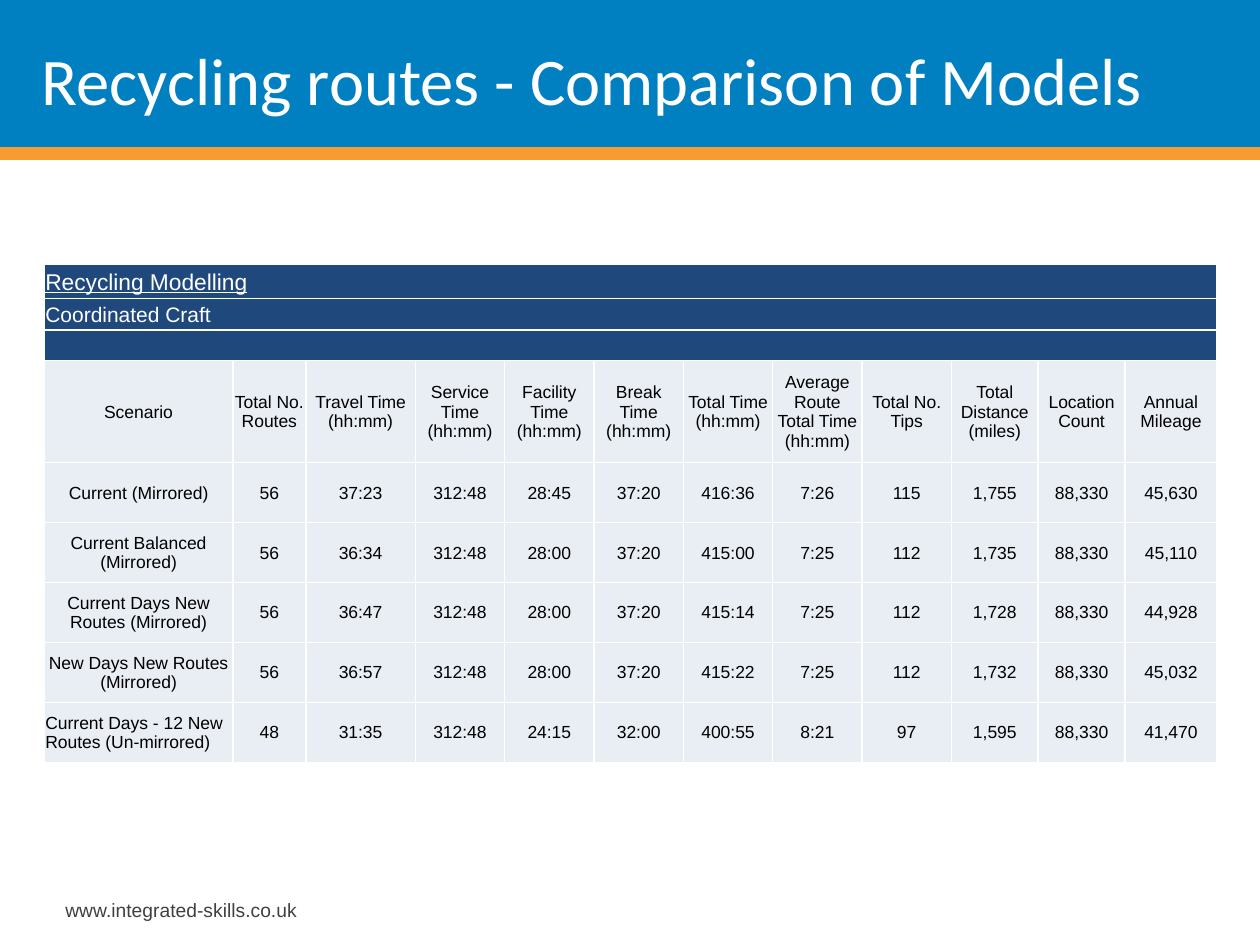
import dataclasses

import lxml.etree
import pptx
import pptx.dml.color
import pptx.enum.shapes
import pptx.enum.text
import pptx.oxml.ns
import pptx.util

HEADINGS = [
    "Scenario", "Total No. Routes", "Travel Time (hh:mm)", "Service Time (hh:mm)",
    "Facility Time (hh:mm)", "Break Time (hh:mm)", "Total Time (hh:mm)",
    "Average Route Total Time (hh:mm)", "Total No. Tips", "Total Distance (miles)",
    "Location Count", "Annual Mileage",
]
SCENARIOS = [
    ["Current (Mirrored)", "56", "37:23", "312:48", "28:45", "37:20",
     "416:36", "7:26", "115", "1,755", "88,330", "45,630"],
    ["Current Balanced (Mirrored)", "56", "36:34", "312:48", "28:00", "37:20",
     "415:00", "7:25", "112", "1,735", "88,330", "45,110"],
    ["Current Days New Routes (Mirrored)", "56", "36:47", "312:48", "28:00", "37:20",
     "415:14", "7:25", "112", "1,728", "88,330", "44,928"],
    ["New Days New Routes (Mirrored)", "56", "36:57", "312:48", "28:00", "37:20",
     "415:22", "7:25", "112", "1,732", "88,330", "45,032"],
    ["Current Days - 12 New Routes (Un-mirrored)", "48", "31:35", "312:48", "24:15", "32:00",
     "400:55", "8:21", "97", "1,595", "88,330", "41,470"],
]
COLUMN_WEIGHTS = [1.5, 0.58, 0.87] + [0.71] * 6 + [0.69, 0.69, 0.73]
TOP_ROW_WEIGHTS = [0.27, 0.25, 0.24, 0.81]
TABLE_WEIGHT = 3.95


@dataclasses.dataclass(frozen=True)
class Theme:
    band: str = "0080C0"
    rule: str = "F89C31"
    banner: str = "1F497D"
    cell: str = "E9EDF4"
    light: str = "FFFFFF"
    dark: str = "000000"
    muted: str = "404040"
    title_font: str = "Calibri"
    body_font: str = "Arial"
    title_size: float = 38
    banner_size: float = 13
    subtitle_size: float = 12
    footer_size: float = 11
    cell_size: float = 10
    rule_width: float = 7.75
    border_width: float = 1


@dataclasses.dataclass(frozen=True)
class Box:
    left: int
    top: int
    width: int
    height: int

    def share(self, x, y, width, height):
        return Box(int(self.left + x * self.width), int(self.top + y * self.height),
                   int(width * self.width), int(height * self.height))

    def edges(self):
        return self.left, self.top, self.width, self.height


THEME = Theme()


def color(value):
    return pptx.dml.color.RGBColor.from_string(value)


def style_text(paragraph, face, size, shade):
    paragraph.font.name = face
    paragraph.font.size = pptx.util.Pt(size)
    paragraph.font.color.rgb = color(shade)


def add_header(slide, box, heading):
    band = slide.shapes.add_shape(pptx.enum.shapes.MSO_SHAPE.RECTANGLE, *box.edges())
    band.shadow.inherit = False
    band.fill.solid()
    band.fill.fore_color.rgb = color(THEME.band)
    band.line.fill.background()

    rule_y = int(box.top + 0.976 * box.height)
    rule = slide.shapes.add_connector(pptx.enum.shapes.MSO_CONNECTOR.STRAIGHT,
                                      box.left, rule_y, box.left + box.width, rule_y)
    rule.line.color.rgb = color(THEME.rule)
    rule.line.width = pptx.util.Pt(THEME.rule_width)
    lxml.etree.SubElement(rule.element.spPr, pptx.oxml.ns.qn("a:effectLst"))

    title = slide.shapes.title
    title.element.getparent().append(title.element)
    title.left, title.top, title.width, title.height = box.share(0.023, 0.1, 0.955, 0.8).edges()
    title.text_frame.text = heading
    title.text_frame.vertical_anchor = pptx.enum.text.MSO_ANCHOR.MIDDLE
    paragraph = title.text_frame.paragraphs[0]
    paragraph.alignment = pptx.enum.text.PP_ALIGN.LEFT
    style_text(paragraph, THEME.title_font, THEME.title_size, THEME.light)


def add_borders(cell):
    properties = cell._tc.get_or_add_tcPr()
    for side in ("a:lnL", "a:lnR", "a:lnT", "a:lnB"):
        line = lxml.etree.SubElement(properties, pptx.oxml.ns.qn(side),
                                     w=str(pptx.util.Pt(THEME.border_width)))
        fill = lxml.etree.SubElement(line, pptx.oxml.ns.qn("a:solidFill"))
        lxml.etree.SubElement(fill, pptx.oxml.ns.qn("a:srgbClr"), val=THEME.light)


def fill_cell(cell, text, background, size, shade, alignment):
    add_borders(cell)
    cell.fill.solid()
    cell.fill.fore_color.rgb = color(background)
    cell.margin_left = cell.margin_right = cell.margin_top = pptx.util.Inches(0.01)
    cell.margin_bottom = 0
    cell.vertical_anchor = pptx.enum.text.MSO_ANCHOR.MIDDLE
    cell.text = text
    paragraph = cell.text_frame.paragraphs[0]
    paragraph.alignment = alignment
    style_text(paragraph, THEME.body_font, size, shade)


def add_comparison(slide, box):
    data_weight = (TABLE_WEIGHT - sum(TOP_ROW_WEIGHTS)) / len(SCENARIOS)
    row_weights = TOP_ROW_WEIGHTS + [data_weight] * len(SCENARIOS)
    table = slide.shapes.add_table(len(row_weights), len(COLUMN_WEIGHTS), *box.edges()).table
    table.first_row = table.horz_banding = False
    for column, weight in zip(table.columns, COLUMN_WEIGHTS):
        column.width = int(box.width * weight / sum(COLUMN_WEIGHTS))
    for row, weight in zip(table.rows, row_weights):
        row.height = int(box.height * weight / TABLE_WEIGHT)

    align = pptx.enum.text.PP_ALIGN
    banners = [("Recycling Modelling", THEME.banner_size),
               ("Coordinated Craft", THEME.subtitle_size),
               ("", THEME.cell_size)]
    for row, (text, size) in enumerate(banners):
        for column in range(len(COLUMN_WEIGHTS)):
            fill_cell(table.cell(row, column), text if column == 0 else "",
                      THEME.banner, size, THEME.light, align.LEFT)
        table.cell(row, 0).merge(table.cell(row, len(COLUMN_WEIGHTS) - 1))
    table.cell(0, 0).text_frame.paragraphs[0].font.underline = True

    for row, values in enumerate([HEADINGS] + SCENARIOS, len(banners)):
        for column, value in enumerate(values):
            fill_cell(table.cell(row, column), value, THEME.cell,
                      THEME.cell_size, THEME.dark, align.CENTER)
    last_scenario = table.cell(len(row_weights) - 1, 0)
    last_scenario.text_frame.paragraphs[0].alignment = align.LEFT


def add_footer(slide, box, address):
    footer = slide.shapes.add_textbox(*box.edges())
    footer.text_frame.word_wrap = True
    footer.text_frame.text = address
    style_text(footer.text_frame.paragraphs[0], THEME.body_font, THEME.footer_size, THEME.muted)


def main():
    deck = pptx.Presentation()
    deck.slide_width = pptx.util.Inches(10)
    deck.slide_height = pptx.util.Inches(7.5)
    page = Box(0, 0, deck.slide_width, deck.slide_height)
    slide = deck.slides.add_slide(deck.slide_layouts.get_by_name("Title Only"))
    add_footer(slide, page.share(0.042, 0.944, 0.21, 0.039), "www.integrated-skills.co.uk")
    add_comparison(slide, page.share(0.035, 0.28, 0.931, 0.527))
    add_header(slide, page.share(0, 0, 1, 1 / 6), "Recycling routes - Comparison of Models")
    deck.save("out.pptx")


if __name__ == "__main__":
    main()
